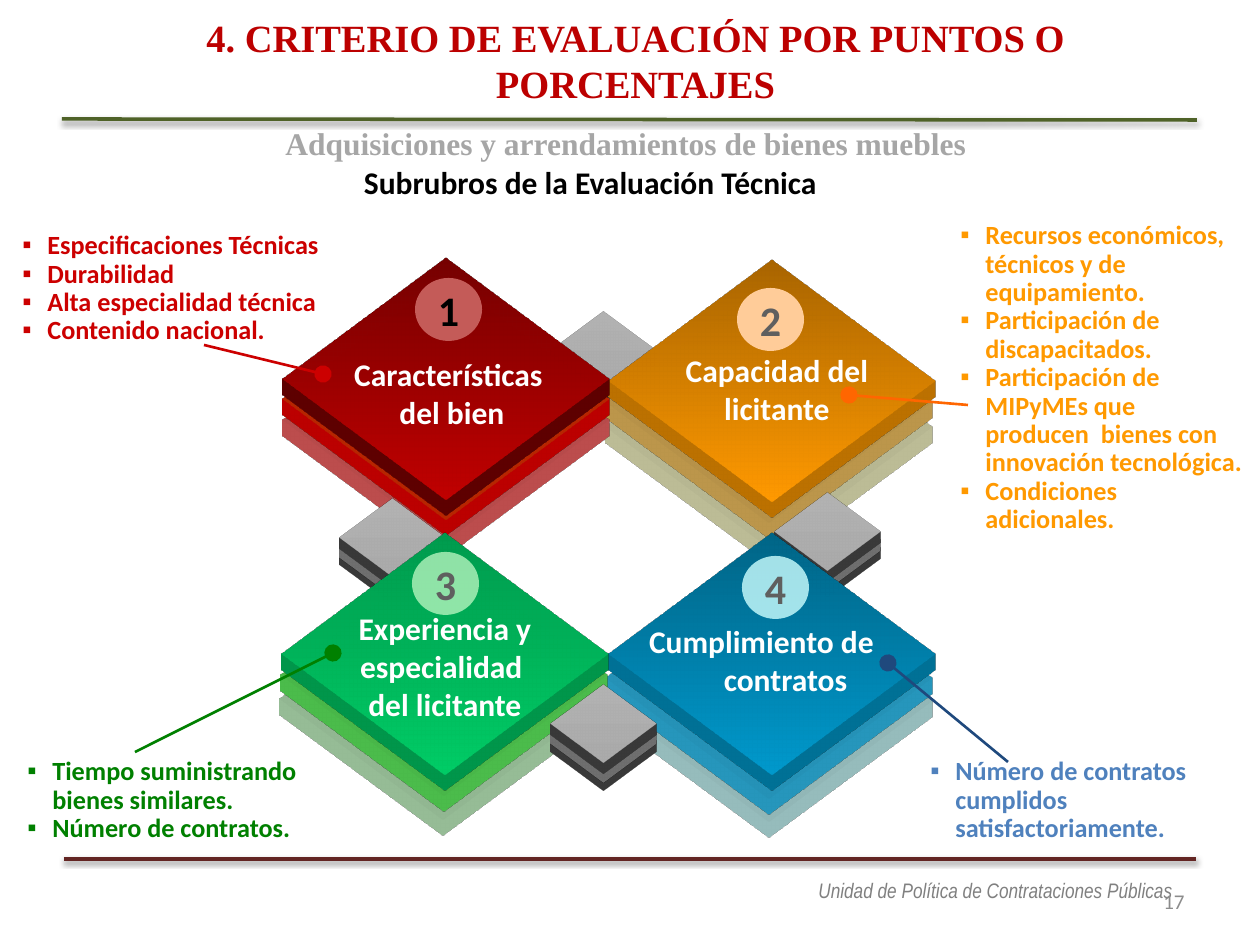
"""Builds the slide on technical sub-criteria for evaluating goods by points or percentages."""
from lxml import etree
from pptx import Presentation
from pptx.dml.color import RGBColor
from pptx.enum.shapes import MSO_CONNECTOR, MSO_SHAPE
from pptx.enum.text import MSO_ANCHOR, MSO_AUTO_SIZE, PP_ALIGN
from pptx.oxml.ns import qn
from pptx.util import Emu, Pt

STRAIGHT = MSO_CONNECTOR.STRAIGHT
DIAMOND, OVAL = MSO_SHAPE.DIAMOND, MSO_SHAPE.OVAL
LEFT, CENTER, RIGHT = PP_ALIGN.LEFT, PP_ALIGN.CENTER, PP_ALIGN.RIGHT
TOP, MIDDLE = MSO_ANCHOR.TOP, MSO_ANCHOR.MIDDLE
GROW, FIXED = MSO_AUTO_SIZE.SHAPE_TO_FIT_TEXT, MSO_AUTO_SIZE.NONE
PX = 914400 // 126
WIDTH, HEIGHT = 1260, 945

THEME = {
    "serif": "Times New Roman", "sans": "Calibri", "narrow": "Arial Narrow", "bullet": "Arial",
    "title": "BC0000", "subtitle": "A6A6A6", "heading": "000000", "white": "FFFFFF",
    "footer": "808080", "page": "8C8C8C", "top_rule": "4F6228", "bottom_rule": "632523",
    "title_size": 22, "body_size": 18, "list_size": 15, "number_size": 24, "footer_size": 12,
}
RULES = [((62, 119), (1197, 120), THEME["top_rule"]),
         ((64, 859), (1196, 859), THEME["bottom_rule"])]
BIG = {"size": (327, 242), "depth": 32}
SMALL = {"size": (106, 78), "depth": 22}
GREY = ["4D4D4D", "969696", ("B2B2B2", "ABABAB")]
STACKS = [
    (SMALL, [(551, 329), (551, 321), (551, 312)], GREY),
    (BIG, [(606, 306), (606, 281), (609, 260)], ["FFFFCC", "FFCC66", ("A96500", "FF9900")]),
    (BIG, [(283, 299), (283, 278), (283, 258)], ["FF6969", "FF3300", ("760000", "C00000")]),
    (SMALL, [(774, 509), (774, 501), (774, 493)], GREY),
    (BIG, [(606, 580), (606, 557), (609, 533)], ["CCFFFF", "33CCFF", ("006587", "0099CC")]),
    (SMALL, [(339, 515), (339, 508), (339, 499)], GREY),
    (BIG, [(280, 578), (281, 554), (282, 533)], ["CCFFCC", "66FF66", ("009B4E", "00CC66")]),
    (SMALL, [(551, 702), (551, 694), (551, 685)], GREY),
]
SIDES = {"FF3300": "FF0000", "C00000": "800000", "ABABAB": "4D4D4D", "969696": "969696"}
BADGES = {
    2: [("1", 415, 278, "C45B58", 100, "000000"), ("2", 737, 288, "FFCC99", 100, "5F5F5F")],
    4: [("4", 742, 556, "CCFFFF", 80, "5F5F5F")],
    6: [("3", 412, 552, "CCFFCC", 70, "5F5F5F")],
}
LABELS = [
    ((341, 349, 222, 88), ["Características ", "del bien"], False),
    ((343, 603, 204, 126), ["Experiencia y ", "especialidad ", "del licitante"], False),
    ((630, 616, 263, 88), ["Cumplimiento de contratos"], True),
    ((670, 345, 214, 88), ["Capacidad del ", "licitante"], False),
]
LISTS = [
    ((918, 752, 343, 98), "4F81BD", ["Número de contratos cumplidos satisfactoriamente."]),
    ((15, 752, 338, 98), "008000",
     ["Tiempo suministrando bienes similares.", "Número de contratos."]),
    ((10, 226, 382, 126), "CC0000",
     ["Especificaciones Técnicas", "Durabilidad", "Alta especialidad técnica",
      "Contenido nacional."]),
    ((948, 216, 307, 325), "FF9900",
     ["Recursos económicos, técnicos y de equipamiento.", "Participación de discapacitados.",
      "Participación de MIPyMEs que producen  bienes con innovación tecnológica.",
      "Condiciones adicionales."]),
]
CALLOUTS = [((323, 374), (204, 345), "CC0000"), ((333, 653), (135, 752), "008000"),
            ((888, 663), (1008, 762), "1F497D"), ((849, 395), (968, 405), "FF6600")]


def px(*values):
    return [Emu(v * PX) for v in values]


def paint(shape, color):
    shape.shadow.inherit = False
    shape.line.fill.background()
    shape.fill.solid()
    shape.fill.fore_color.rgb = RGBColor.from_string(color)


def add_text(s, box, lines, size, color, font=THEME["sans"], bold=True, italic=False,
             align=CENTER, anchor=TOP, wrap=True, fit=GROW, hang=0, bullet=None):
    tf = s.shapes.add_textbox(*px(*box)).text_frame
    tf.word_wrap = wrap
    tf.auto_size = fit
    tf.vertical_anchor = anchor
    for i, line in enumerate(lines):
        p = tf.paragraphs[0] if i == 0 else tf.add_paragraph()
        p.alignment = align
        if hang:
            pPr = p._p.get_or_add_pPr()
            pPr.set("marL", str(hang * PX))
            pPr.set("indent", str(-hang * PX))
        if bullet:
            p.line_spacing = 0.9
            etree.SubElement(pPr, qn("a:buFont"), typeface=THEME["bullet"])
            etree.SubElement(pPr, qn("a:buChar"), char=bullet)
        r = p.add_run()
        r.text = line
        r.font.name, r.font.size = font, Pt(size)
        r.font.bold, r.font.italic = bold, italic
        r.font.color.rgb = RGBColor.from_string(color)


def add_line(s, start, end, color, width, shadow=False, dot=False):
    line = s.shapes.add_connector(STRAIGHT, *px(*start, *end))
    line.line.color.rgb = RGBColor.from_string(color)
    line.line.width = Pt(width)
    effects = etree.SubElement(line._element.spPr, qn("a:effectLst"))
    if shadow:
        outer = etree.SubElement(effects, qn("a:outerShdw"), blurRad=str(Pt(3.1)),
                                 dist=str(Pt(1.6)), dir="5400000", rotWithShape="0")
        black = etree.SubElement(outer, qn("a:srgbClr"), val="000000")
        etree.SubElement(black, qn("a:alpha"), val="38000")
    if dot:
        etree.SubElement(line.line._get_or_add_ln(), qn("a:headEnd"),
                         type="oval", w="lg", len="lg")


def extrude(shape, depth, color):
    spPr = shape._element.spPr
    scene = etree.SubElement(spPr, qn("a:scene3d"))
    etree.SubElement(scene, qn("a:camera"), prst="legacyObliqueBottom")
    etree.SubElement(scene, qn("a:lightRig"), rig="legacyFlat3", dir="b")
    solid = etree.SubElement(spPr, qn("a:sp3d"), extrusionH=str(depth * PX),
                             prstMaterial="legacyMatte")
    for edge in ("bevelT", "bevelB"):
        etree.SubElement(solid, qn(f"a:{edge}"), w="13500", h="13500", prst="angle")
    for part in ("extrusionClr", "contourClr"):
        etree.SubElement(etree.SubElement(solid, qn(f"a:{part}")), qn("a:srgbClr"), val=color)


def add_tile(s, x, y, size, depth, fill):
    first, last = fill if isinstance(fill, tuple) else (fill, fill)
    tile = s.shapes.add_shape(DIAMOND, *px(x, y, *size))
    paint(tile, first)
    if first != last:
        tile.fill.gradient()
        tile.fill.gradient_angle = 270
        for stop, color in zip(tile.fill.gradient_stops, (first, last)):
            stop.color.rgb = RGBColor.from_string(color)
    extrude(tile, depth, SIDES.get(last, last))


def add_badge(s, number, x, y, color, opacity, ink):
    disc = s.shapes.add_shape(OVAL, *px(x, y, 67, 63))
    paint(disc, color)
    if opacity < 100:
        rgb = disc._element.spPr.find(qn("a:solidFill"))[0]
        etree.SubElement(rgb, qn("a:alpha"), val=str(opacity * 1000))
    add_text(s, (x + 9, y, 49, 63), [number], THEME["number_size"], ink, wrap=False)


def main():
    prs = Presentation()
    prs.slide_width, prs.slide_height = px(WIDTH, HEIGHT)
    s = prs.slides.add_slide(prs.slide_layouts[6])
    t = THEME
    for start, end, color in RULES:
        add_line(s, start, end, color, 2, shadow=True)
    add_text(s, (84, 871, 1101, 38), ["Unidad de Política de Contrataciones Públicas"],
             t["footer_size"], t["footer"], t["narrow"], bold=False, italic=True, align=RIGHT)
    add_text(s, (903, 876, 294, 50), ["17"], t["footer_size"], t["page"],
             bold=False, align=RIGHT, anchor=MIDDLE, fit=FIXED)
    add_text(s, (59, 125, 1134, 35), ["Adquisiciones y arrendamientos de bienes muebles"],
             t["body_size"], t["subtitle"], t["serif"], anchor=MIDDLE, fit=FIXED)
    for i, (kind, places, fills) in enumerate(STACKS):
        for (x, y), fill in zip(places, fills):
            add_tile(s, x, y, kind["size"], kind["depth"], fill)
        for badge in BADGES.get(i, []):
            add_badge(s, *badge)
    for box, lines, wrap in LABELS:
        add_text(s, box, lines, t["body_size"], t["white"], wrap=wrap, hang=48)
    add_text(s, (333, 157, 515, 50), ["Subrubros de la Evaluación Técnica"],
             t["body_size"], t["heading"])
    for box, color, items in LISTS:
        add_text(s, box, items, t["list_size"], color, align=LEFT, hang=25, bullet="▪")
    for start, end, color in CALLOUTS:
        add_line(s, start, end, color, 1.5, dot=True)
    add_text(s, (74, 8, 1123, 106), ["4. CRITERIO DE EVALUACIÓN POR PUNTOS O PORCENTAJES"],
             t["title_size"], t["title"], t["serif"])
    prs.save("out.pptx")


if __name__ == "__main__":
    main()
